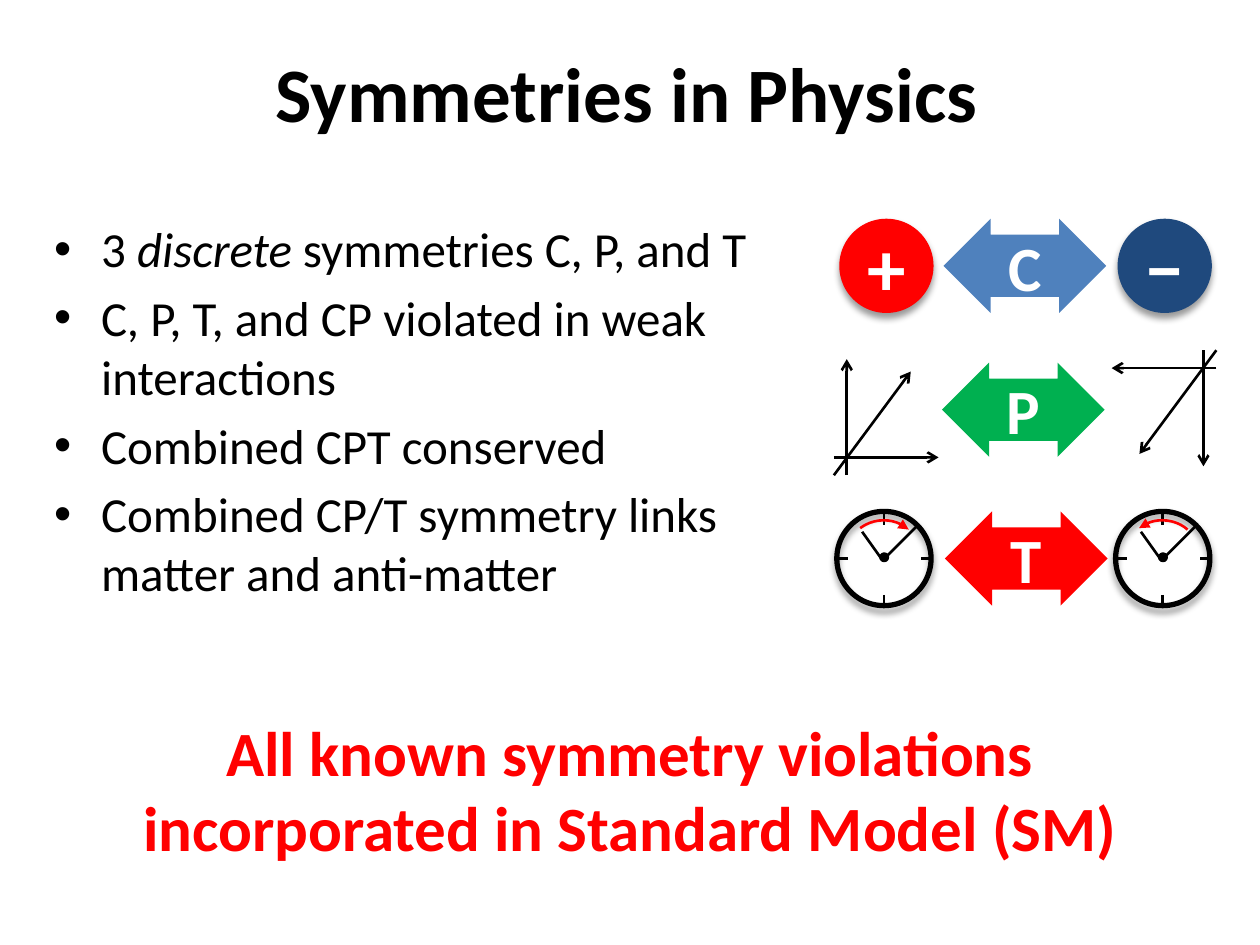
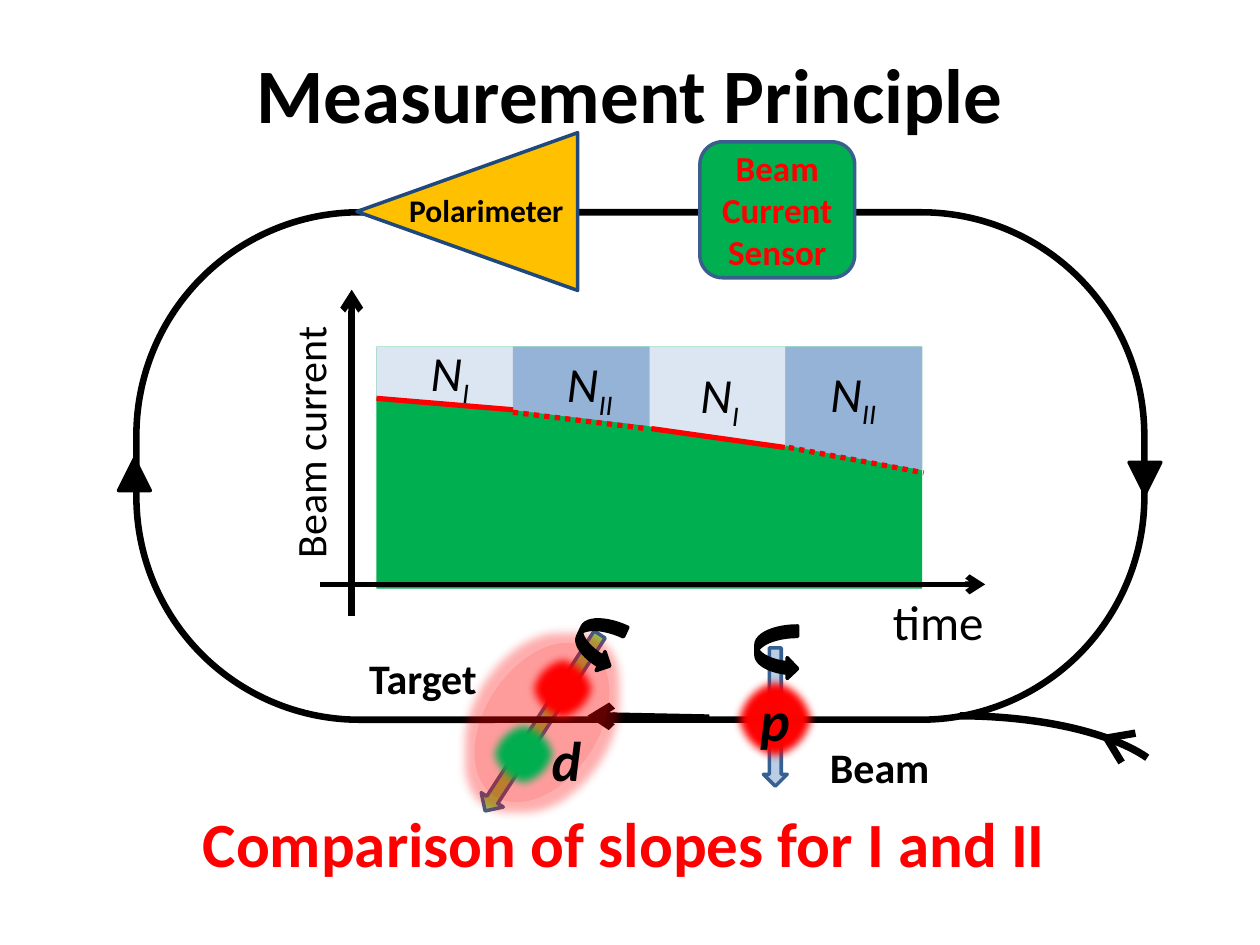
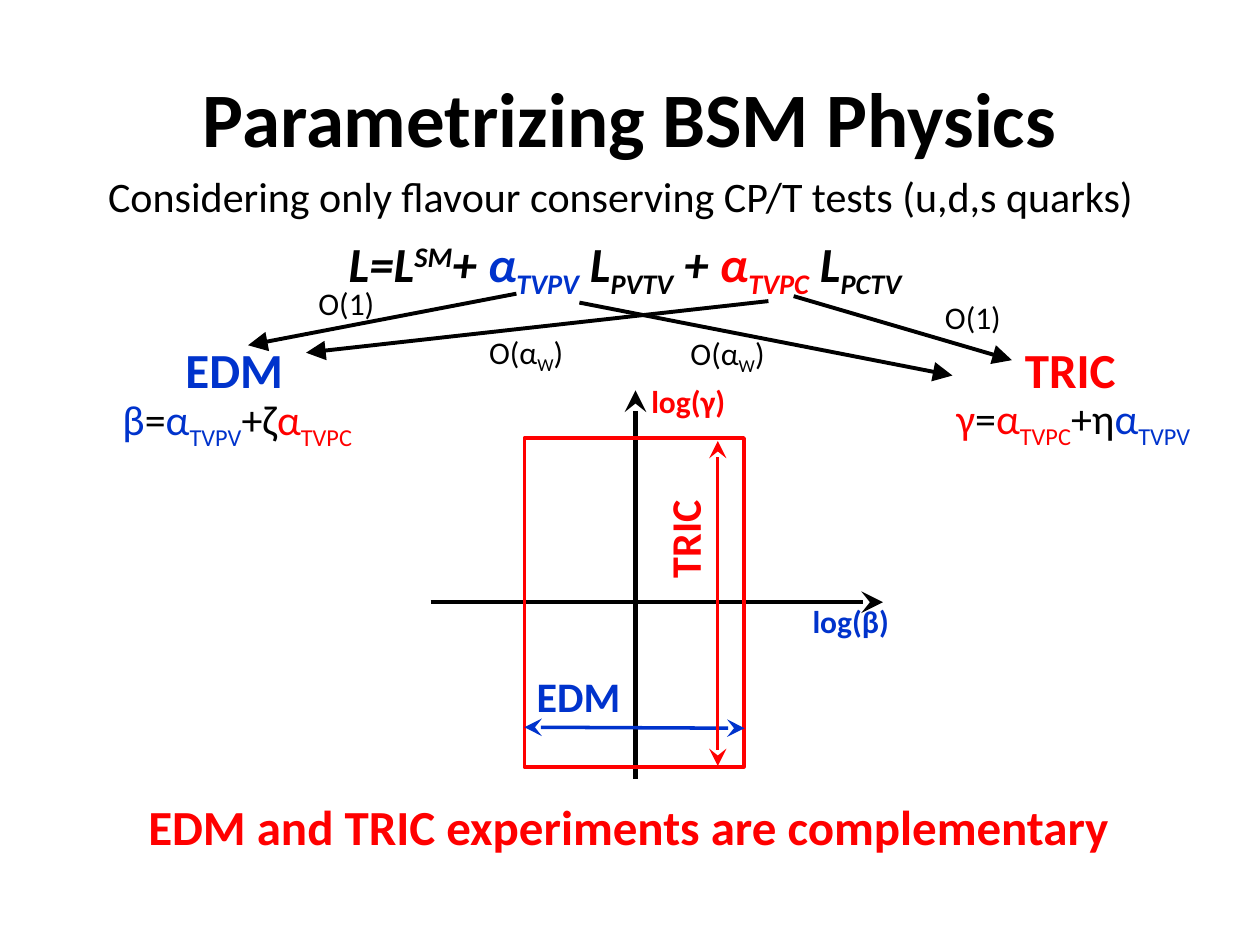
from dataclasses import dataclass

from lxml import etree
from pptx import Presentation
from pptx.dml.color import RGBColor
from pptx.enum.dml import MSO_LINE
from pptx.enum.shapes import MSO_CONNECTOR, MSO_SHAPE as SHAPE
from pptx.enum.text import MSO_ANCHOR, MSO_AUTO_SIZE, PP_ALIGN as ALIGN
from pptx.oxml import parse_xml
from pptx.oxml.ns import nsdecls, qn
from pptx.util import Cm, Pt


@dataclass(frozen=True)
class Theme:
    font: str = "Calibri"
    black: str = "000000"
    white: str = "FFFFFF"
    red: str = "FF0000"
    green: str = "00B050"
    navy: str = "1F497D"
    sky: str = "4F81BD"
    blue: str = "0033CC"
    lime: str = "92D050"
    amber: str = "FFC000"
    edge: str = "3A5F8C"
    spin: str = "B9CDE5"
    spin_edge: str = "376092"
    pale: str = "DCE6F2"
    steel: str = "95B3D7"
    title: int = 44
    sign: int = 44
    headline: int = 36
    particle: int = 32
    body: int = 28
    label: int = 24
    device: int = 20
    small: int = 18


THEME = Theme()
SUB, SUPER = -25000, 30000
SHADOW = ('<a:outerShdw {} blurRad="50800" dist="38100" dir="5400000" rotWithShape="0">'
          '<a:srgbClr val="000000"><a:alpha val="40000"/></a:srgbClr></a:outerShdw>')
SOFT_EDGE = '<a:softEdge {} rad="63500"/>'
GLOW = ('<a:glow {} rad="139700"><a:srgbClr val="FF0000">'
        '<a:alpha val="32000"/></a:srgbClr></a:glow>')

SYMMETRY_POINTS = [
    [("3 ",), ("discrete", None, 0, True), (" symmetries C, P, and T",)],
    "C, P, T, and CP violated in weak interactions",
    "Combined CPT conserved",
    "Combined CP/T symmetry links matter and anti-matter",
]
SYMMETRY_CONCLUSION = ["All known symmetry violations",
                       "incorporated in Standard Model (SM)"]
SYMMETRY_ARROWS = [
    ("C", 19.02, 4.41, THEME.sky),
    ("P", 18.99, 7.31, THEME.green),
    ("T", 19.05, 10.31, THEME.red),
]
CHARGES = [("+", 16.92, THEME.red), ("−", 22.53, THEME.navy)]
FRAME_AXES = [
    ((17.07, 9.58), (17.07, 7.24)),
    ((16.81, 9.58), (18.36, 7.49)),
    ((16.81, 9.22), (18.92, 9.22)),
]
MIRROR_SUM = (41.33, 16.64)
CLOCK_TICKS = [
    ((0.95, 0), (0.95, 0.28)),
    ((0, 0.95), (0.22, 0.95)),
    ((0.95, 1.68), (0.95, 1.9)),
    ((1.9, 0.95), (1.7, 0.95)),
]
CLOCK_HANDS = [((0.51, 0.41), (0.91, 0.97)), ((0.97, 0.94), (1.63, 0.28))]
CLOCKS = [(16.87, {"tail": "triangle"}), (22.49, {"head": "triangle"})]
DISC = 1.9

BEAM_SEGMENTS = [
    ("I", 1.27, (7.59, 8.03), (10.34, 8.26), (8.43, 6.78)),
    ("II", 1.6, (10.34, 8.31), (13.03, 8.64), (11.18, 7.01)),
    ("I", 2.01, (13.13, 8.64), (15.82, 9.02), (13.87, 7.23)),
    ("II", 2.49, (15.9, 9.02), (18.62, 9.53), (16.49, 7.2)),
]
SEGMENT_WIDTH = 2.75
PLOT = (7.59, 6.99, 11, 4.88)
PLOT_AXES = [((6.45, 11.78), (19.86, 11.78), 3.25), ((7.09, 12.42), (7.09, 5.84), 3.75)]
INJECTION_HEAD = [((22.61, 15.37), (22.3, 14.86)), ((22.3, 14.88), (22.89, 14.78))]
RING_MARKERS = [(2.39, 9.25, 0), (22.76, 9.32, 180)]
SPIN_ARROWS = [(11.63, 12.42, 25), (15.24, 12.62, 0)]
NUCLEONS = [(9.83, 14.48, THEME.green), (10.62, 13.16, THEME.red)]
RING_LABELS = [("Beam", (16.48, 14.83, 2.54, 1.27)), ("Target", (7.19, 13.03, 2.72, 1.27))]

LAGRANGIAN = [
    ("L=L",), ("SM", None, SUPER), ("+ ",),
    ("α", THEME.blue), ("TVPV", THEME.blue, SUB), (" L",), ("PVTV", None, SUB), (" + ",),
    ("α", THEME.red), ("TVPC", THEME.red, SUB), (" L",), ("PCTV", None, SUB),
]
COUPLING_ARROWS = [
    ((10.41, 5.92), (5, 6.96)),
    ((16, 5.97), (20.4, 7.26)),
    ((15.49, 6.07), (6.17, 7.11)),
    ((11.68, 6.1), (19.2, 7.57)),
]
WEAK_ORDER = [("O(α",), ("W", None, SUB), (")",)]
ORDERS = [
    ("O(1)", (6.17, 5.6, 1.68, 1.02)),
    ("O(1)", (18.8, 5.89, 1.68, 1.02)),
    (WEAK_ORDER, (9.61, 6.58, 2.08, 1.02)),
    (WEAK_ORDER, (13.67, 6.6, 2.08, 1.02)),
]
EXPERIMENTS = [
    ("EDM", (3.49, 6.71, 2.49, 1.45), THEME.blue,
     [("β", THEME.blue), ("=",), ("α", THEME.blue), ("TVPV", THEME.blue, SUB),
      ("+ζ",), ("α", THEME.red), ("TVPC", THEME.red, SUB)], (2.22, 7.81, 6.43, 1.27)),
    ("TRIC", (20.41, 6.71, 2.36, 1.45), THEME.red,
     [("γ", THEME.red), ("=",), ("α", THEME.red), ("TVPC", THEME.red, SUB),
      ("+η",), ("α", THEME.blue), ("TVPV", THEME.blue, SUB)], (19.03, 7.79, 5.87, 1.27)),
]
LIMIT_AXES = [
    ("log(γ)", (12.88, 7.57, 2.16, 1.12), THEME.red, (12.81, 15.7), (12.81, 7.87)),
    ("log(β)", (16.13, 12.01, 2.16, 1.12), THEME.blue, (8.68, 12.14), (17.8, 12.14)),
]
LIMIT_BOX = (10.57, 8.83, 4.43, 6.63)
LIMIT_RANGES = [
    ((10.57, 14.66), (15.01, 14.68), THEME.blue, 2),
    ((14.47, 8.89), (14.47, 15.44), THEME.red, 1.75),
]


def rgb(colour):
    return RGBColor.from_string(colour)


def cm(values):
    return [Cm(value) for value in values]


def shift(point, left, top):
    return left + point[0], top + point[1]


def add_run(paragraph, text, colour=None, baseline=0, italic=False):
    run = paragraph.add_run()
    run.text = text
    if colour:
        run.font.color.rgb = rgb(colour)
    if italic:
        run.font.italic = True
    if baseline:
        run._r.get_or_add_rPr().set("baseline", str(baseline))


def write(frame, paragraphs, size, colour=THEME.black, bold=False, italic=False,
          align=ALIGN.LEFT, bullets=False):
    for index, content in enumerate(paragraphs):
        paragraph = frame.paragraphs[0] if index == 0 else frame.add_paragraph()
        paragraph.alignment = align
        if bullets:
            properties = paragraph._p.get_or_add_pPr()
            properties.set("marL", str(Cm(0.95)))
            properties.set("indent", str(-Cm(0.95)))
            if index:
                paragraph.space_before = Pt(size * 0.2)
            etree.SubElement(properties, qn("a:buFont"), typeface="Arial")
            etree.SubElement(properties, qn("a:buChar"), char="•")
        font = paragraph.font
        font.name, font.size = THEME.font, Pt(size)
        font.bold, font.italic = bold, italic
        font.color.rgb = rgb(colour)
        for part in [(content,)] if isinstance(content, str) else content:
            add_run(paragraph, *part)


def add_text(shapes, box, paragraphs, size, wrap=False, **style):
    shape = shapes.add_textbox(*cm(box))
    shape.text_frame.word_wrap = wrap
    write(shape.text_frame, paragraphs, size, **style)
    return shape


def add_heads(shape, head=None, tail=None, scale="med"):
    line = shape._element.spPr.find(qn("a:ln"))
    for tag, kind in (("a:headEnd", head), ("a:tailEnd", tail)):
        if kind:
            etree.SubElement(line, qn(tag), type=kind, w=scale, len=scale)


def add_line(shapes, start, end, width, colour=THEME.black, dash=None, **heads):
    connector = shapes.add_connector(MSO_CONNECTOR.STRAIGHT, *cm(start), *cm(end))
    connector.line.color.rgb = rgb(colour)
    connector.line.width = Pt(width)
    if dash:
        connector.line.dash_style = dash
    add_heads(connector, **heads)
    etree.SubElement(connector._element.spPr, qn("a:effectLst"))


def add_figure(shapes, kind, box, fill=None, line=None, width=2, adjust=(), rotation=0,
               effect=None, text=None, size=None, colour=THEME.white, italic=False):
    shape = shapes.add_shape(kind, *cm(box))
    shape.rotation = rotation
    shape.shadow.inherit = False
    for index, value in enumerate(adjust):
        shape.adjustments[index] = value
    if fill:
        shape.fill.solid()
        shape.fill.fore_color.rgb = rgb(fill)
    else:
        shape.fill.background()
    if line:
        shape.line.color.rgb = rgb(line)
        shape.line.width = Pt(width)
    else:
        shape.line.fill.background()
    if effect:
        effects = shape._element.spPr.find(qn("a:effectLst"))
        effects.append(parse_xml(effect.format(nsdecls("a"))))
    if text:
        shape.text_frame.vertical_anchor = MSO_ANCHOR.MIDDLE
        write(shape.text_frame, [text], size, colour, True, italic, ALIGN.CENTER)
    return shape


def add_slide(presentation, title, box):
    slide = presentation.slides.add_slide(presentation.slide_layouts[5])
    placeholder = slide.shapes.title
    placeholder.left, placeholder.top, placeholder.width, placeholder.height = cm(box)
    frame = placeholder.text_frame
    frame.auto_size = MSO_AUTO_SIZE.NONE
    frame.vertical_anchor = MSO_ANCHOR.MIDDLE
    write(frame, [title], THEME.title, bold=True, align=ALIGN.CENTER)
    return slide.shapes


def add_clock(shapes, left, top, heads):
    for start, end in CLOCK_TICKS + CLOCK_HANDS:
        add_line(shapes, shift(start, left, top), shift(end, left, top), 1.5)
    add_figure(shapes, SHAPE.OVAL, (left, top, DISC, DISC), line=THEME.black, width=3,
               effect=SHADOW)
    add_figure(shapes, SHAPE.OVAL, (left + 0.89, top + 0.86, 0.13, 0.13), THEME.black,
               THEME.black)
    sweep = add_figure(shapes, SHAPE.ARC, (left + 0.21, top + 0.18, 1.47, 1.35),
                       line=THEME.red, width=1.5, adjust=(136.57, 189.63))
    add_heads(sweep, **heads)


def build_symmetries(presentation):
    shapes = add_slide(presentation, "Symmetries in Physics", (5.25, 0.79, 14.78, 2.13))
    add_text(shapes, (0.84, 4.29, 15.75, 10.57), SYMMETRY_POINTS, THEME.body, True,
             bullets=True)
    groups = []
    for letter, left, top, fill in SYMMETRY_ARROWS:
        group = shapes.add_group_shape().shapes
        add_figure(group, SHAPE.LEFT_RIGHT_ARROW, (left, top, 3.28, DISC), fill,
                   adjust=(0.66, 0.5), text=letter, size=THEME.headline)
        groups.append(group)
    charge, parity, time = groups
    for sign, left, fill in CHARGES:
        add_figure(charge, SHAPE.OVAL, (left, 4.41, DISC, DISC), fill, effect=SHADOW,
                   text=sign, size=THEME.sign)
    for axis in FRAME_AXES:
        mirrored = [(MIRROR_SUM[0] - x, MIRROR_SUM[1] - y) for x, y in axis]
        for start, end in (axis, mirrored):
            add_line(parity, start, end, 1.5, tail="arrow")
    for left, heads in CLOCKS:
        add_clock(time, left, 10.31, heads)
    add_text(shapes, (1.12, 14.25, 23.16, 3.33), SYMMETRY_CONCLUSION, THEME.headline, True,
             colour=THEME.red, bold=True, align=ALIGN.CENTER)


def add_ring(shapes):
    add_figure(shapes, SHAPE.DOWN_ARROW, (10.67, 12.45, 0.53, 4.24), THEME.lime, THEME.edge,
               rotation=33)
    add_figure(shapes, SHAPE.ARC, (14.99, 14.43, 8.64, 3.18), THEME.white, THEME.black, 4.25,
               (162.87, 209.39))
    add_figure(shapes, SHAPE.ROUNDED_RECTANGLE, (2.75, 4.28, 20.32, 10.23),
               line=THEME.black, width=3.75, adjust=(0.44,))
    add_line(shapes, (14.3, 14.48), (11.84, 14.43), 4.5, tail="arrow")
    add_figure(shapes, SHAPE.DOWN_ARROW, (15.39, 13.06, 0.48, 2.79), THEME.spin,
               THEME.spin_edge)
    add_figure(shapes, SHAPE.OVAL, (14.76, 13.62, 1.73, 1.75), THEME.red, THEME.black,
               effect=SOFT_EDGE, text="p", size=THEME.particle, colour=THEME.black,
               italic=True)
    target = add_figure(shapes, SHAPE.OVAL, (9.78, 12.8, 2.29, 3.53), THEME.red,
                        rotation=33, effect=GLOW)
    fill_colour = target._element.spPr.find(qn("a:solidFill")).find(qn("a:srgbClr"))
    etree.SubElement(fill_colour, qn("a:alpha"), val="10000")
    for left, top, fill in NUCLEONS:
        add_figure(shapes, SHAPE.OVAL, (left, top, 1.45, 1.45), fill, THEME.edge,
                   effect=SOFT_EDGE)
    for left, top, rotation in SPIN_ARROWS:
        add_figure(shapes, SHAPE.CURVED_RIGHT_ARROW, (left, top, 0.84, 1.07), THEME.black,
                   THEME.black, rotation=rotation)
    for text, box in RING_LABELS:
        add_text(shapes, box, [text], THEME.label, bold=True)
    for start, end in INJECTION_HEAD:
        add_line(shapes, start, end, 4.25)
    for left, top, rotation in RING_MARKERS:
        add_figure(shapes, SHAPE.ISOSCELES_TRIANGLE, (left, top, 0.64, 0.64), THEME.black,
                   THEME.black, rotation=rotation)
    add_text(shapes, (10.87, 14.5, 1.12, 1.63), ["d"], THEME.particle, bold=True, italic=True)
    add_figure(shapes, SHAPE.ISOSCELES_TRIANGLE, (7.83, 2.04, 3.18, 4.45), THEME.amber,
               THEME.navy, rotation=270)
    add_text(shapes, (8, 3.73, 3.63, 1.02), ["Polarimeter"], THEME.small, bold=True)
    add_figure(shapes, SHAPE.ROUNDED_RECTANGLE, (14.11, 2.86, 3.12, 2.74), THEME.green,
               THEME.edge, text="Beam Current Sensor", size=THEME.device, colour=THEME.red)


def add_beam_plot(shapes):
    add_text(shapes, (17.75, 11.8, 2.36, 1.45), ["time"], THEME.body)
    add_text(shapes, (3.63, 8.26, 5.23, 1.27), ["Beam current"], THEME.label).rotation = 270
    add_figure(shapes, SHAPE.RECTANGLE, PLOT, THEME.green)
    for start, end, width in PLOT_AXES:
        add_line(shapes, start, end, width, tail="arrow")
    for index, (state, height, *_) in enumerate(BEAM_SEGMENTS):
        fill = THEME.pale if state == "I" else THEME.steel
        box = (PLOT[0] + index * SEGMENT_WIDTH, PLOT[1], SEGMENT_WIDTH, height)
        cover = add_figure(shapes, SHAPE.FLOWCHART_MANUAL_INPUT, box, fill)
        cover._element.spPr.find(qn("a:xfrm")).set("flipV", "1")
    for state, _, start, end, label in BEAM_SEGMENTS:
        add_line(shapes, start, end, 3, THEME.red, MSO_LINE.ROUND_DOT if state == "II" else None)
        add_text(shapes, (*label, 1.2 + 0.18 * len(state), 1.45),
                 [[("N",), (state, None, SUB)]], THEME.body, italic=True)


def build_measurement(presentation):
    shapes = add_slide(presentation, "Measurement Principle", (1.27, 0.81, 22.86, 2.13))
    add_ring(shapes)
    add_text(shapes, (3.84, 16.09, 17.73, 1.8), ["Comparison of slopes for I and II"],
             THEME.headline, True, colour=THEME.red, bold=True)
    add_beam_plot(shapes.add_group_shape().shapes)


def add_limits(shapes):
    for name, box, colour, start, end in LIMIT_AXES:
        add_line(shapes, start, end, 2.5, tail="stealth", scale="lg")
        add_text(shapes, box, [name], THEME.small, colour=colour, bold=True)
    add_figure(shapes, SHAPE.RECTANGLE, LIMIT_BOX, line=THEME.red)
    for start, end, colour, width in LIMIT_RANGES:
        add_line(shapes, start, end, width, colour, head="stealth", tail="stealth",
                 scale="lg")
    add_text(shapes, (10.57, 13.39, 2.31, 1.37), ["EDM"], THEME.label, colour=THEME.blue,
             bold=True)
    upright = add_text(shapes, (13.16, 9.93, 1.6, 1.98), ["TRIC"], THEME.label,
                       colour=THEME.red, bold=True)
    upright._element.txBody.find(qn("a:bodyPr")).set("vert", "vert270")


def build_parameters(presentation):
    shapes = add_slide(presentation, "Parametrizing BSM Physics", (1.27, 0.76, 22.86, 3.18))
    add_text(shapes, (1.93, 3.32, 21.54, 1.37),
             ["Considering only flavour conserving CP/T tests (u,d,s quarks)"],
             THEME.label, True)
    add_text(shapes, (6.78, 4.58, 12.88, 1.45), [LAGRANGIAN], THEME.body, bold=True,
             italic=True)
    for start, end in COUPLING_ARROWS:
        add_line(shapes, start, end, 2.25, tail="triangle", scale="lg")
    for order, box in ORDERS:
        add_text(shapes, box, [order], THEME.small)
    for name, name_box, colour, formula, formula_box in EXPERIMENTS:
        add_text(shapes, name_box, [name], THEME.body, colour=colour, bold=True)
        add_text(shapes, formula_box, [formula], THEME.label, True)
    add_limits(shapes.add_group_shape().shapes)
    add_text(shapes, (2.74, 15.93, 20.09, 1.45),
             ["EDM and TRIC experiments are complementary"], THEME.body,
             colour=THEME.red, bold=True)


def main():
    presentation = Presentation()
    presentation.slide_width, presentation.slide_height = Cm(25.4), Cm(19.05)
    build_symmetries(presentation)
    build_measurement(presentation)
    build_parameters(presentation)
    presentation.save("out.pptx")


if __name__ == "__main__":
    main()
